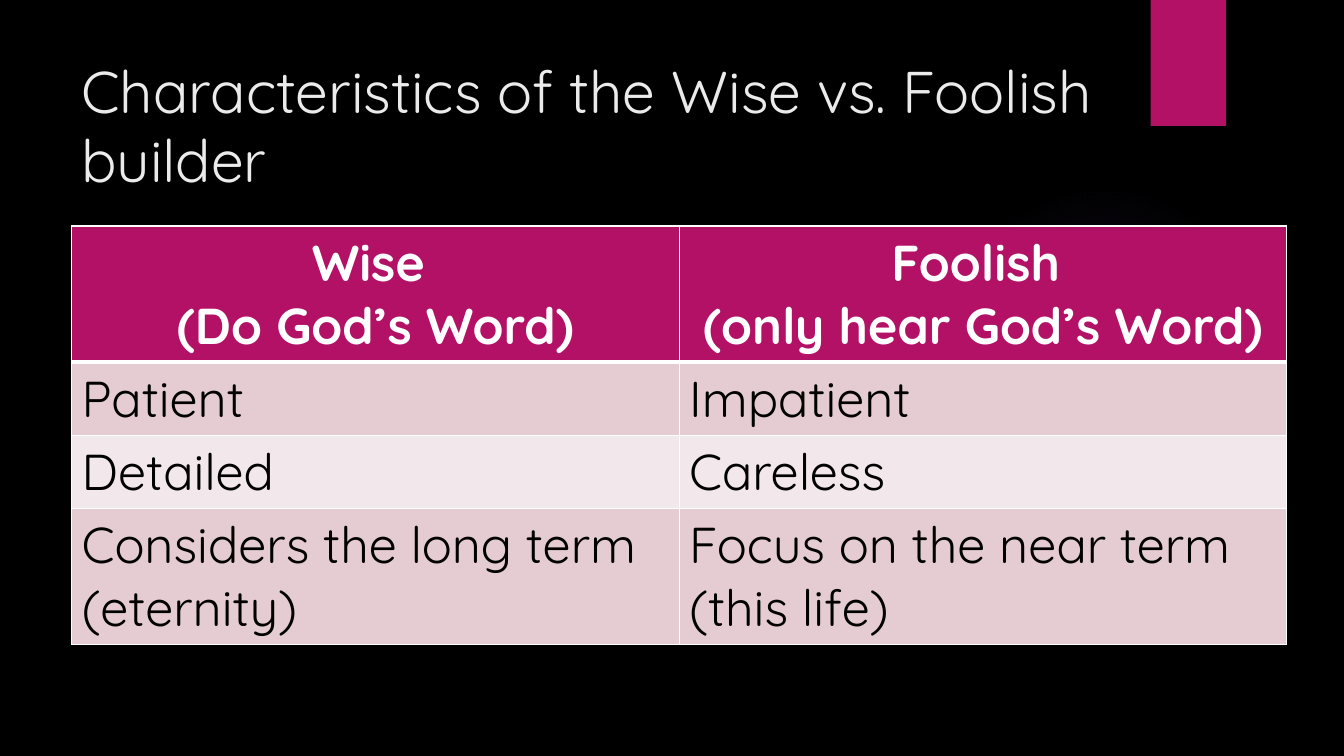
import lxml.etree
import pptx
import pptx.dml.color
import pptx.enum.shapes
import pptx.enum.text
import pptx.oxml
import pptx.oxml.ns
import pptx.util

Pt = pptx.util.Pt
ALIGN = pptx.enum.text.PP_ALIGN
ANCHOR = pptx.enum.text.MSO_ANCHOR
SHAPE = pptx.enum.shapes.MSO_SHAPE
COLORS = {
    "background": "000000",
    "accent": "B31166",
    "glow": "9B6BF2",
    "title": "EBEBEB",
    "white": "FFFFFF",
    "black": "000000",
    "band_dark": "E5CCD3",
    "band_light": "F2E7EA",
}


def rgb(name):
    return pptx.dml.color.RGBColor.from_string(COLORS[name])


def write(frame, text, size=36, color="black", bold=False, align=ALIGN.LEFT, spacing=None):
    frame.word_wrap = True
    for index, line in enumerate(text.split("\n")):
        para = frame.paragraphs[0] if index == 0 else frame.add_paragraph()
        para.alignment = align
        if spacing:
            para.line_spacing = spacing
        span = para.add_run()
        span.text = line
        span.font.name = "Quicksand"
        span.font.size = Pt(size)
        span.font.bold = bold
        span.font.color.rgb = rgb(color)


deck = pptx.Presentation()
deck.slide_width, deck.slide_height = Pt(960), Pt(540)
slide = deck.slides.add_slide(deck.slide_layouts[6])
slide.background.fill.solid()
slide.background.fill.fore_color.rgb = rgb("background")

# Faint round glow
glow = slide.shapes.add_shape(SHAPE.OVAL, Pt(677.5), Pt(131.8), Pt(221.8), Pt(221.8))
glow.shadow.inherit = False
glow.line.fill.background()
stops = "".join(
    f'<a:gs pos="{place * 1000}"><a:srgbClr val="{COLORS["glow"]}">'
    f'<a:alpha val="{alpha * 1000}"/></a:srgbClr></a:gs>'
    for place, alpha in [(0, 7), (36, 6), (69, 0)]
)
gradient = pptx.oxml.parse_xml(
    f'<a:gradFill {pptx.oxml.ns.nsdecls("a")}><a:gsLst>{stops}</a:gsLst>'
    '<a:path path="circle"><a:fillToRect l="50000" t="50000" r="50000" b="50000"/></a:path>'
    "</a:gradFill>"
)
glow.element.spPr.find(pptx.oxml.ns.qn("a:prstGeom")).addnext(gradient)

# Accent tab at the top
tab = slide.shapes.add_shape(SHAPE.RECTANGLE, Pt(821.9), Pt(0), Pt(54), Pt(90))
tab.shadow.inherit = False
tab.fill.solid()
tab.fill.fore_color.rgb = rgb("accent")
tab.line.fill.background()

# Title
box = slide.shapes.add_textbox(Pt(51.1), Pt(36), Pt(741), Pt(110.2))
box.text_frame.vertical_anchor = ANCHOR.MIDDLE
write(box.text_frame, "Characteristics of the Wise vs. Foolish builder",
      size=42, color="title", spacing=0.97)

# Comparison table
rows = [
    ("Wise \n(Do God’s Word)", "Foolish \n(only hear God’s Word)"),
    ("Patient", "Impatient"),
    ("Detailed", "Careless"),
    ("Considers the long term (eternity)", "Focus on the near term (this life)"),
]
heights = [97.2, 52.2, 52.2, 97.2]
fills = ["accent", "band_dark", "band_light", "band_dark"]
table = slide.shapes.add_table(4, 2, Pt(51.1), Pt(161.5), Pt(868), Pt(sum(heights))).table
for row_index, texts in enumerate(rows):
    table.rows[row_index].height = Pt(heights[row_index])
    header = row_index == 0
    for column_index, text in enumerate(texts):
        cell = table.cell(row_index, column_index)
        write(cell.text_frame, text, bold=header,
              color="white" if header else "black",
              align=ALIGN.CENTER if header else ALIGN.LEFT)

        # White borders, thicker between header and body
        properties = cell._tc.get_or_add_tcPr()
        for side in "LRTB":
            thick = (row_index, side) in [(0, "B"), (1, "T")]
            properties.append(pptx.oxml.parse_xml(
                f'<a:ln{side} {pptx.oxml.ns.nsdecls("a")} w="{Pt(3 if thick else 1)}">'
                f'<a:solidFill><a:srgbClr val="{COLORS["white"]}"/></a:solidFill></a:ln{side}>'
            ))
        cell.fill.solid()
        cell.fill.fore_color.rgb = rgb(fills[row_index])

deck.save("out.pptx")
